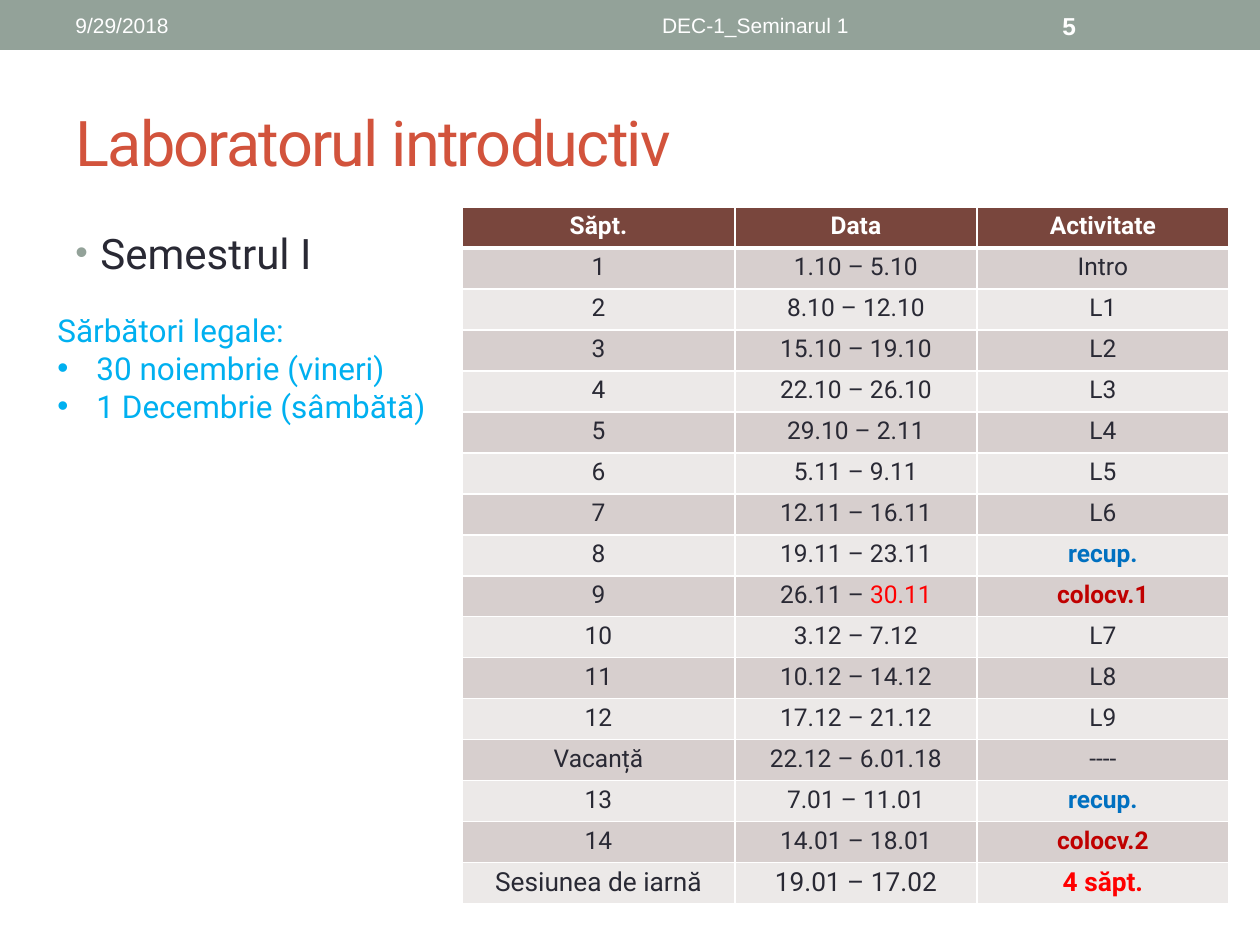
from dataclasses import dataclass

from lxml.etree import SubElement
from pptx import Presentation
from pptx.dml.color import RGBColor
from pptx.enum.shapes import MSO_SHAPE
from pptx.enum.text import MSO_ANCHOR, PP_ALIGN
from pptx.oxml import parse_xml
from pptx.oxml.ns import nsdecls, qn
from pptx.util import Pt

PX = 914400 / 126


@dataclass(frozen=True)
class Theme:
    heading_font: str = "Roboto"
    banner_font: str = "Arial"
    white: str = "FFFFFF"
    sage: str = "93A299"
    title: str = "D2533C"
    ink: str = "292934"
    holiday: str = "00B0F0"
    header: str = "79463D"
    bands: tuple = ("D7CFCE", "ECE9E8")
    blue: str = "0070C0"
    crimson: str = "C00000"
    red: str = "FF0000"
    title_size: int = 36
    body_size: int = 24
    note_size: int = 18
    last_row_size: int = 15
    table_size: int = 14
    banner_size: int = 12


THEME = Theme()


def emu(px):
    return round(px * PX)


class SlideBuilder:
    def __init__(self, deck, theme):
        self.theme = theme
        self.page = deck.slides.add_slide(deck.slide_layouts[6])

    def add_span(self, para, text, size, color, font=None, **formats):
        span = para.add_run()
        span.text = text
        span.font.color.rgb = RGBColor.from_string(color)
        values = {"size": Pt(size), "name": font or self.theme.heading_font, **formats}
        for name, value in values.items():
            setattr(span.font, name, value)
        return span

    def bar(self, left, top, width, height, color):
        box = self.page.shapes.add_shape(
            MSO_SHAPE.RECTANGLE, *map(emu, (left, top, width, height)))
        box.shadow.inherit = False
        box.fill.solid()
        box.fill.fore_color.rgb = RGBColor.from_string(color)
        box.line.fill.background()

    def text(self, place, anchor=MSO_ANCHOR.TOP):
        box = self.page.shapes.add_textbox(*map(emu, place))
        frame = box.text_frame
        frame.word_wrap = True
        frame.vertical_anchor = anchor
        return frame

    def bullet(self, para, indent, color=None, percent=100):
        properties = para._p.get_or_add_pPr()
        properties.set("marL", str(emu(indent)))
        properties.set("indent", str(-emu(indent)))
        if color:
            SubElement(SubElement(properties, qn("a:buClr")), qn("a:srgbClr"), val=color)
        SubElement(properties, qn("a:buSzPct"), val=str(percent * 1000))
        SubElement(properties, qn("a:buFont"), typeface="Arial")
        SubElement(properties, qn("a:buChar"), char="•")

    def borders(self, cell, bottom):
        properties = cell._tc.get_or_add_tcPr()
        widths = {"lnL": 1, "lnR": 1, "lnT": 1, "lnB": bottom}
        for index, (side, width) in enumerate(widths.items()):
            properties.insert(index, parse_xml(
                f'<a:{side} {nsdecls("a")} w="{int(Pt(width))}"><a:solidFill>'
                f'<a:srgbClr val="{self.theme.white}"/></a:solidFill></a:{side}>'))

    def cell(self, cell, spans, fill, bottom=1):
        margins = {"margin_left": 10, "margin_right": 10, "margin_top": 5, "margin_bottom": 5}
        for name, value in margins.items():
            setattr(cell, name, emu(value))
        cell.fill.solid()
        cell.fill.fore_color.rgb = RGBColor.from_string(fill)
        self.borders(cell, bottom)
        para = cell.text_frame.paragraphs[0]
        para.alignment = PP_ALIGN.CENTER
        for text, size, color, bold in spans:
            self.add_span(para, text, size, color, bold=bold)

    def table(self, left, top, widths, row_height, header, rows, accents):
        theme = self.theme
        count = len(rows) + 1
        grid = self.page.shapes.add_table(
            count, len(widths), emu(left), emu(top),
            emu(sum(widths)), emu(row_height * count)).table
        for column, width in zip(grid.columns, widths):
            column.width = emu(width)
        for row in grid.rows:
            row.height = emu(row_height)
        for column, label in enumerate(header):
            self.cell(grid.cell(0, column),
                      [(label, theme.table_size, theme.white, True)], theme.header, 3)
        for number, row in enumerate(rows, 1):
            size = theme.last_row_size if number == len(rows) else theme.table_size
            fill = theme.bands[(number - 1) % 2]
            for column, value in enumerate(row):
                # A tuple holds several spans in one cell
                parts = value if isinstance(value, tuple) else (value,)
                spans = []
                for part in parts:
                    color, bold = accents.get(part, (theme.ink, False))
                    spans.append((part, size, color, bold))
                self.cell(grid.cell(number, column), spans, fill)


HEADER = ("Săpt.", "Data", "Activitate")
SCHEDULE = [
    ("1", "1.10 – 5.10", "Intro"),
    ("2", "8.10 – 12.10", "L1"),
    ("3", "15.10 – 19.10", "L2"),
    ("4", "22.10 – 26.10", "L3"),
    ("5", "29.10 – 2.11", "L4"),
    ("6", "5.11 – 9.11", "L5"),
    ("7", "12.11 – 16.11", "L6"),
    ("8", "19.11 – 23.11", "recup."),
    ("9", ("26.11 – ", "30.11"), "colocv.1"),
    ("10", "3.12 – 7.12", "L7"),
    ("11", "10.12 – 14.12", "L8"),
    ("12", "17.12 – 21.12", "L9"),
    ("Vacanță", "22.12 – 6.01.18", "----"),
    ("13", "7.01 – 11.01", "recup."),
    ("14", "14.01 – 18.01", "colocv.2"),
    ("Sesiunea de iarnă", "19.01 – 17.02", "4 săpt."),
]
ACCENTS = {
    "recup.": (THEME.blue, True),
    "colocv.1": (THEME.crimson, True),
    "colocv.2": (THEME.crimson, True),
    "30.11": (THEME.red, False),
    "4 săpt.": (THEME.red, True),
}
BANNER = [
    (63, 399, "9/29/2018", PP_ALIGN.LEFT, THEME.banner_size, False),
    (472, 567, "DEC-1_Seminarul 1", PP_ALIGN.CENTER, THEME.banner_size, False),
    (1050, 147, "5", PP_ALIGN.LEFT, THEME.table_size, True),
]
HOLIDAYS = ["30 noiembrie (vineri)", "1 Decembrie (sâmbătă)"]


def main():
    deck = Presentation()
    deck.slide_width, deck.slide_height = emu(1260), emu(945)
    slide = SlideBuilder(deck, THEME)

    # Top banner: date, footer and page number
    slide.bar(0, 0, 1260, 50, THEME.sage)
    for left, width, label, alignment, size, bold in BANNER:
        para = slide.text((left, 3, width, 45), MSO_ANCHOR.MIDDLE).paragraphs[0]
        para.alignment = alignment
        slide.add_span(para, label, size, THEME.white, THEME.banner_font, bold=bold)

    # Title with tightened letter spacing
    para = slide.text((63, 73, 1134, 136), MSO_ANCHOR.MIDDLE).paragraphs[0]
    span = slide.add_span(para, "Laboratorul introductiv", THEME.title_size, THEME.title)
    span.font._element.set("spc", "-100")

    # Semester heading
    para = slide.text((63, 221, 1134, 672)).paragraphs[0]
    slide.bullet(para, 25, THEME.sage, 85)
    slide.add_span(para, "Semestrul I", THEME.body_size, THEME.ink)

    # Weekly schedule
    slide.table(462, 207, (273, 242, 252), 41, HEADER, SCHEDULE, ACCENTS)

    # Public holidays
    frame = slide.text((45, 305, 400, 127))
    slide.add_span(frame.paragraphs[0], "Sărbători legale:", THEME.note_size, THEME.holiday)
    for holiday in HOLIDAYS:
        para = frame.add_paragraph()
        slide.bullet(para, 39)
        slide.add_span(para, holiday, THEME.note_size, THEME.holiday)

    deck.save("out.pptx")


if __name__ == "__main__":
    main()
